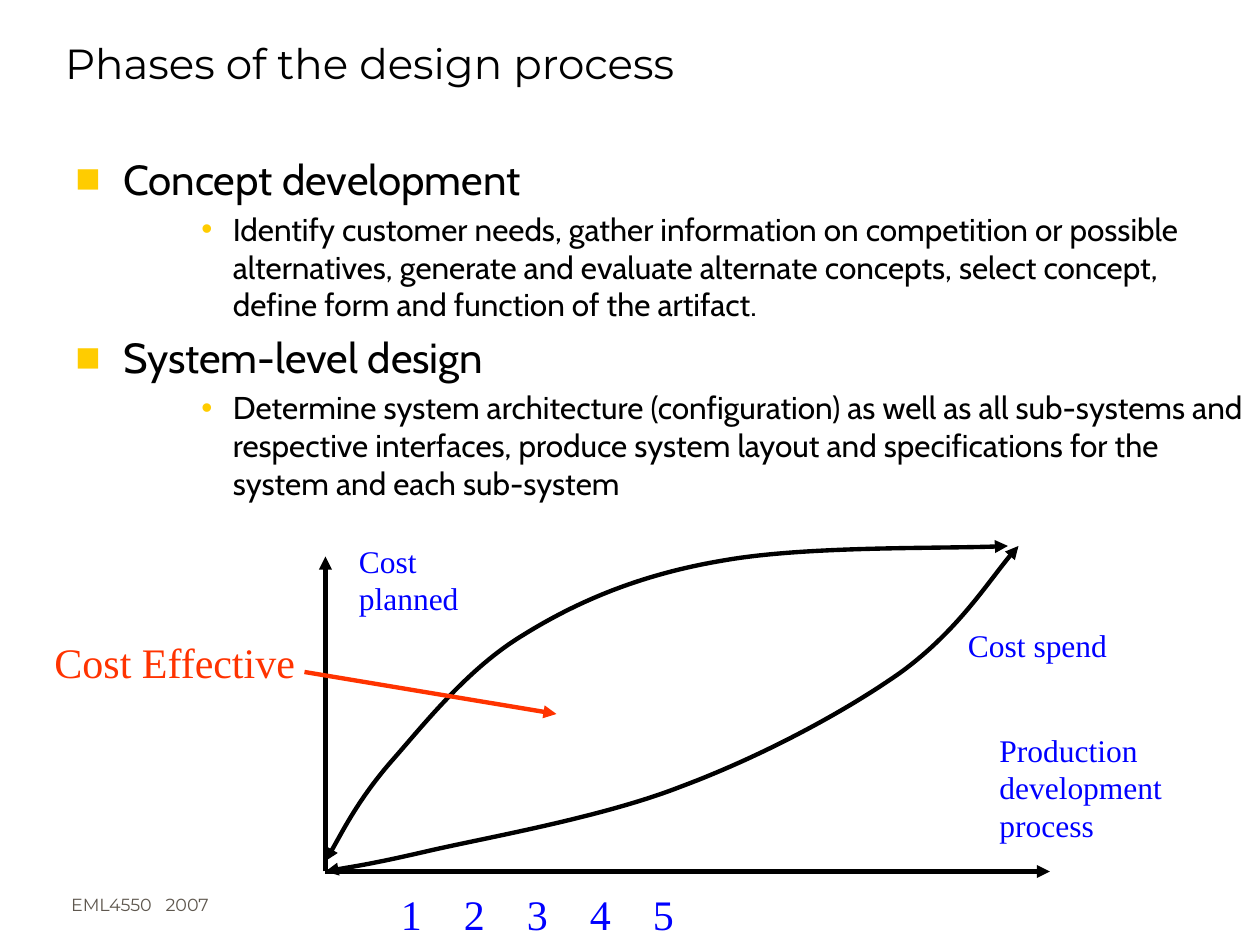
from collections import namedtuple
from dataclasses import dataclass

from lxml import etree
from pptx import Presentation
from pptx.dml.color import RGBColor
from pptx.enum.shapes import MSO_CONNECTOR
from pptx.enum.text import MSO_ANCHOR, MSO_AUTO_SIZE, PP_ALIGN
from pptx.oxml.ns import qn
from pptx.util import Inches, Pt

STRAIGHT = MSO_CONNECTOR.STRAIGHT
TOP, BOTTOM = MSO_ANCHOR.TOP, MSO_ANCHOR.BOTTOM
FIXED, GROW = MSO_AUTO_SIZE.NONE, MSO_AUTO_SIZE.SHAPE_TO_FIT_TEXT
LEFT = PP_ALIGN.LEFT
TITLE_ONLY = 5
CELL = Inches(1) / 12
COLUMNS, ROWS = 120, 90

Box = namedtuple("Box", "left top width height")


@dataclass(frozen=True)
class Theme:
    """Colours, fonts and type sizes of the slide."""
    ink: str = "000000"
    footer_ink: str = "5E574E"
    marker: str = "FFCC00"
    label: str = "0000FF"
    accent: str = "FF3300"
    heading_font: str = "Montserrat"
    body_font: str = "Cabin"
    chart_font: str = "Times New Roman"
    large: int = 24
    medium: int = 18
    small: int = 10
    stroke: float = 2.5


THEME = Theme()
BULLETS = {0: ("■", 0.38, 0.38, THEME.large), 2: ("•", 1.25, 0.25, THEME.medium)}
TOPICS = [
    (0, "Concept development"),
    (2, "Identify customer needs, gather information on competition or possible "
        "alternatives, generate and evaluate alternate concepts, select concept, "
        "define form and function of the artifact."),
    (0, "System-level design"),
    (2, "Determine system architecture (configuration) as well as all sub-systems and "
        "respective interfaces, produce system layout and specifications for the "
        "system and each sub-system"),
]
SPEND_CURVE = [
    (0, 0), (2.1, 0.4), (4.4, 0.7), (10, 2), (15.7, 3.3), (26.5, 5.2), (33.9, 8.1),
    (41.4, 10.9), (49.3, 15.1), (54.7, 18.9), (60.1, 22.8), (63.7, 28.5), (66, 31),
]
PLANNED_CURVE = [
    (0, 1), (1, 2.6), (3.1, 6.8), (6.2, 10.4), (9.3, 13.9), (13.5, 19.3), (18.8, 22.5),
    (24.1, 25.8), (30.1, 28.3), (37.8, 29.6), (45.6, 31), (59.4, 30.7), (65, 31),
]
LABELS = [
    ("1\t2\t3\t4\t5", Box(6, -1, 52.4, 6), THEME.large, THEME.label, False),
    ("Production development process", Box(63, 14, 26, 12), THEME.medium, THEME.label, True),
    ("Cost spend", Box(60, 24, 15.7, 4.8), THEME.medium, THEME.label, False),
    ("Cost planned", Box(2, 32, 18.1, 4.8), THEME.medium, THEME.label, False),
    ("Cost Effective", Box(-27, 23, 25.3, 6), THEME.large, THEME.accent, False),
]


def cells(*values):
    """Turn grid cells into lengths."""
    return [round(value * CELL) for value in values]


def apply(target, formats):
    """Set each attribute of the target from a dict."""
    for name, value in formats.items():
        setattr(target, name, value)


def write(para, text, font, size, color):
    """Add one formatted span to a paragraph."""
    span = para.add_run()
    span.text = text
    apply(span.font, {"name": font, "size": Pt(size)})
    span.font.color.rgb = RGBColor.from_string(color)


def add_text(shapes, box, **formats):
    """Add a text box and return its frame."""
    frame = shapes.add_textbox(*cells(*box)).text_frame
    apply(frame, {"word_wrap": True, "auto_size": FIXED, **formats})
    return frame


def add_bullet(para, symbol, indent, hang):
    """Give a paragraph a coloured bullet and hanging indent."""
    props = para._p.get_or_add_pPr()
    props.set("marL", str(Inches(indent)))
    props.set("indent", str(-Inches(hang)))
    color = etree.SubElement(props, qn("a:buClr"))
    etree.SubElement(color, qn("a:srgbClr"), val=THEME.marker)
    etree.SubElement(props, qn("a:buFont"), typeface="Arial")
    etree.SubElement(props, qn("a:buChar"), char=symbol)


def style_line(shape, color, ends):
    """Colour a line and put arrowheads on the given ends."""
    shape.line.width = Pt(THEME.stroke)
    shape.line.color.rgb = RGBColor.from_string(color)
    for end in ends:
        etree.SubElement(shape.line._ln, qn(f"a:{end}"), type="triangle")


def add_arrow(shapes, start, finish, color):
    """Draw a straight arrow between two slide points."""
    arrow = shapes.add_connector(STRAIGHT, *start, *finish)
    style_line(arrow, color, ["tailEnd"])
    etree.SubElement(arrow._element.spPr, qn("a:effectLst"))


def add_curve(shapes, points):
    """Draw a Bezier curve with arrowheads at both ends."""
    builder = shapes.build_freeform(*points[0], scale=1.0)
    builder.add_line_segments(points[1:], close=False)
    curve = builder.convert_to_shape()
    curve.shadow.inherit = False
    curve.fill.background()
    outline = next(curve._element.iter(qn("a:path")))
    segments = outline.findall(qn("a:lnTo"))
    for first in range(0, len(segments), 3):
        bezier = etree.SubElement(outline, qn("a:cubicBezTo"))
        for segment in segments[first:first + 3]:
            bezier.append(segment[0])
            outline.remove(segment)
    style_line(curve, THEME.ink, ["headEnd", "tailEnd"])


def place_title(page, box):
    """Move and format the title placeholder."""
    title = page.shapes.title
    apply(title, dict(zip(("left", "top", "width", "height"), cells(*box))))
    frame = title.text_frame
    apply(frame, {"vertical_anchor": BOTTOM, "auto_size": FIXED, "word_wrap": True})
    para = frame.paragraphs[0]
    para.alignment = LEFT
    write(para, "Phases of the design process", THEME.heading_font, THEME.large, THEME.ink)


def place_topics(page, box):
    """Write the bulleted design phases."""
    frame = add_text(page.shapes, box, vertical_anchor=TOP)
    for index, (level, text) in enumerate(TOPICS):
        symbol, indent, hang, size = BULLETS[level]
        para = frame.add_paragraph() if index else frame.paragraphs[0]
        para.level = level
        if index:
            para.space_before = Pt(0.2 * size)
        add_bullet(para, symbol, indent, hang)
        write(para, text, THEME.body_font, size, THEME.ink)


def place_footer(page, box):
    """Write the course code and year."""
    para = add_text(page.shapes, box, vertical_anchor=BOTTOM).paragraphs[0]
    tabs = etree.SubElement(para._p.get_or_add_pPr(), qn("a:tabLst"))
    etree.SubElement(tabs, qn("a:tab"), pos=str(Inches(0.75)), algn="l")
    write(para, "EML4550\t2007", THEME.heading_font, THEME.small, THEME.footer_ink)


def place_cost_diagram(page, box):
    """Draw the axes, cost curves and labels from the box's lower left corner."""
    shapes = page.shapes.add_group_shape().shapes
    base = box.top + box.height

    def spot(across, up):
        """Turn diagram units into a slide point."""
        return cells(box.left + across, base - up)

    origin = spot(0, 0)
    for finish in [(box.width, 0), (0, box.height - 1)]:
        add_arrow(shapes, origin, spot(*finish), THEME.ink)
    for curve in (SPEND_CURVE, PLANNED_CURVE):
        add_curve(shapes, [spot(*point) for point in curve])
    for text, place, size, color, wrap in LABELS:
        label_box = place._replace(left=box.left + place.left, top=base - place.top)
        frame = add_text(shapes, label_box, word_wrap=wrap, auto_size=GROW)
        write(frame.paragraphs[0], text, THEME.chart_font, size, color)
    add_arrow(shapes, spot(-2, 19), spot(22, 15), THEME.accent)


def main():
    """Build and save the slide."""
    deck = Presentation()
    deck.slide_width, deck.slide_height = cells(COLUMNS, ROWS)
    page = deck.slides.add_slide(deck.slide_layouts[TITLE_ONLY])
    place_footer(page, Box(5.6, 84, 34.3, 3.7))
    place_title(page, Box(5, 2, 106.7, 7))
    place_topics(page, Box(6, 14, 114, 67))
    place_cost_diagram(page, Box(31, 52, 69, 31))
    deck.save("out.pptx")


if __name__ == "__main__":
    main()
